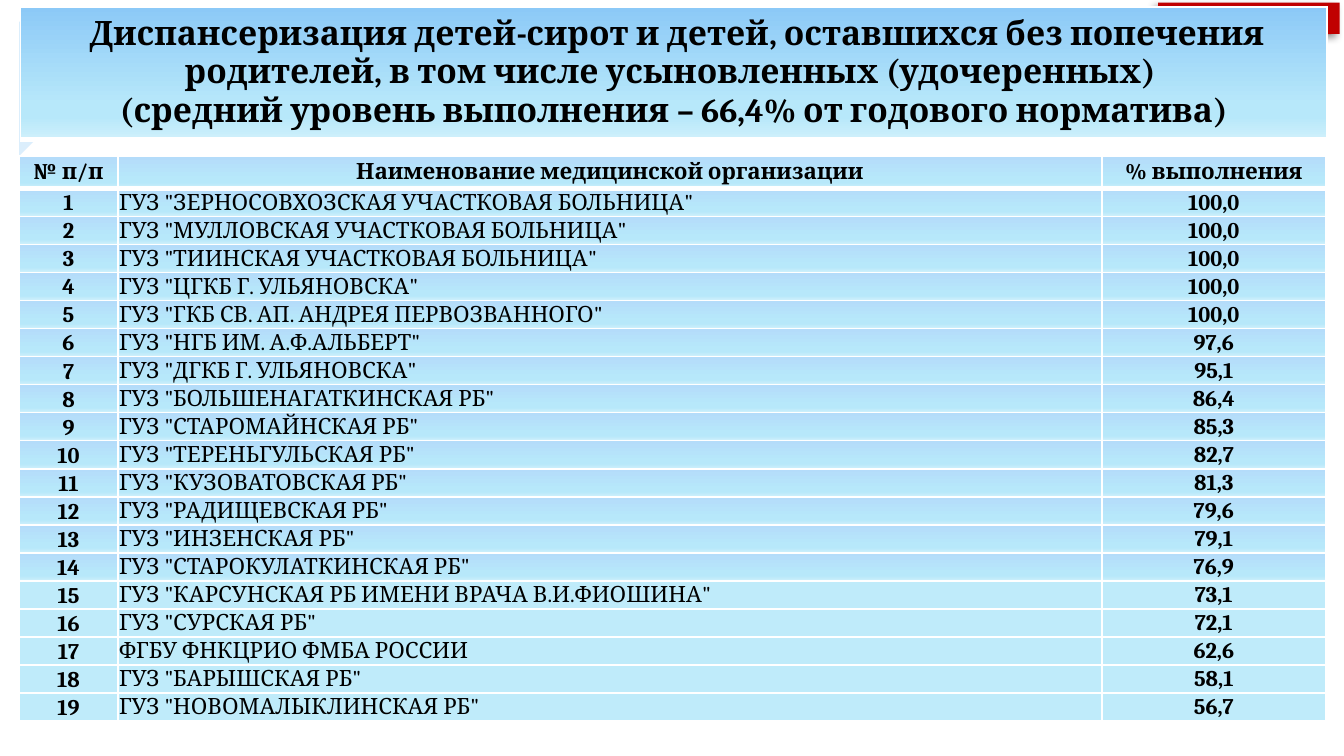
from lxml.etree import SubElement
from pptx import Presentation
from pptx.dml.color import RGBColor
from pptx.enum.shapes import MSO_SHAPE as Preset
from pptx.enum.text import MSO_ANCHOR as Anchor, PP_ALIGN as Align
from pptx.oxml.ns import qn
from pptx.util import Cm, Pt

FONT = "Cambria"
WHITE, BLACK, RED, BLUE = "FFFFFF", "000000", "C00000", "4FADF3"
LIGHT_BLUE = "BFEBFA"
TITLE_GRADIENT = [(0, "8CC9F7"), (74, "B7E8FA"), (83, "B7E8FA"), (100, "CFF0FB")]
ROW_GRADIENT = [(0, "B4DCFA")] + TITLE_GRADIENT[1:]
GRADIENT_ROWS = 14

TITLE = [
    " Диспансеризация детей-сирот и детей, оставшихся без попечения "
    "родителей, в том числе усыновленных (удочеренных) ",
    "(средний уровень выполнения – 66,4% от годового норматива)",
]
HEADERS = ["№ п/п", "Наименование медицинской организации", "% выполнения"]
ORGANIZATIONS = [
    ('ГУЗ "ЗЕРНОСОВХОЗСКАЯ УЧАСТКОВАЯ БОЛЬНИЦА"', "100,0"),
    ('ГУЗ "МУЛЛОВСКАЯ УЧАСТКОВАЯ БОЛЬНИЦА"', "100,0"),
    ('ГУЗ "ТИИНСКАЯ УЧАСТКОВАЯ БОЛЬНИЦА"', "100,0"),
    ('ГУЗ "ЦГКБ Г. УЛЬЯНОВСКА"', "100,0"),
    ('ГУЗ "ГКБ СВ. АП. АНДРЕЯ ПЕРВОЗВАННОГО"', "100,0"),
    ('ГУЗ "НГБ ИМ. А.Ф.АЛЬБЕРТ"', "97,6"),
    ('ГУЗ "ДГКБ Г. УЛЬЯНОВСКА"', "95,1"),
    ('ГУЗ "БОЛЬШЕНАГАТКИНСКАЯ РБ"', "86,4"),
    ('ГУЗ "СТАРОМАЙНСКАЯ РБ"', "85,3"),
    ('ГУЗ "ТЕРЕНЬГУЛЬСКАЯ РБ"', "82,7"),
    ('ГУЗ "КУЗОВАТОВСКАЯ РБ"', "81,3"),
    ('ГУЗ "РАДИЩЕВСКАЯ РБ"', "79,6"),
    ('ГУЗ "ИНЗЕНСКАЯ РБ"', "79,1"),
    ('ГУЗ "СТАРОКУЛАТКИНСКАЯ РБ"', "76,9"),
    ('ГУЗ "КАРСУНСКАЯ РБ ИМЕНИ ВРАЧА В.И.ФИОШИНА"', "73,1"),
    ('ГУЗ "СУРСКАЯ РБ"', "72,1"),
    ("ФГБУ ФНКЦРИО ФМБА РОССИИ", "62,6"),
    ('ГУЗ "БАРЫШСКАЯ РБ"', "58,1"),
    ('ГУЗ "НОВОМАЛЫКЛИНСКАЯ РБ"', "56,7"),
]


def rgb(color):
    return RGBColor.from_string(color)


def add_color(parent, color, alpha=100):
    element = SubElement(parent, qn("a:srgbClr"), val=color)
    if alpha < 100:
        SubElement(element, qn("a:alpha"), val=str(alpha * 1000))


def add_filled_shape(slide, preset, left, top, width, height, color):
    shape = slide.shapes.add_shape(preset, Cm(left), Cm(top), Cm(width), Cm(height))
    shape.shadow.inherit = False
    shape.fill.solid()
    shape.fill.fore_color.rgb = rgb(color)
    shape.line.fill.background()
    return shape


def add_shadow(shape):
    effects = shape.element.spPr.find(qn("a:effectLst"))
    shadow = SubElement(effects, qn("a:outerShdw"), blurRad=str(Pt(4)),
                        dist=str(Pt(3)), dir=str(135 * 60000))
    add_color(shadow, BLACK, 40)


def set_transparency(shape, alpha):
    color = shape.element.spPr.find(qn("a:solidFill"))[0]
    SubElement(color, qn("a:alpha"), val=str(alpha * 1000))


def add_grid(slide, left, top, widths, heights):
    frame = slide.shapes.add_table(len(heights), len(widths), Cm(left), Cm(top),
                                   Cm(sum(widths)), Cm(sum(heights)))
    table = frame.table
    table.horz_banding = False
    table.first_row = False
    for column, width in zip(table.columns, widths):
        column.width = Cm(width)
    for row, height in zip(table.rows, heights):
        row.height = Cm(height)
    return table


def set_borders(cell, top=1, bottom=1):
    properties = cell._tc.get_or_add_tcPr()
    for side, width in (("L", 1), ("R", 1), ("T", top), ("B", bottom)):
        line = SubElement(properties, qn(f"a:ln{side}"), w=str(Pt(width)))
        add_color(SubElement(line, qn("a:solidFill")), WHITE)


def set_gradient(cell, stops):
    gradient = SubElement(cell._tc.get_or_add_tcPr(), qn("a:gradFill"))
    stop_list = SubElement(gradient, qn("a:gsLst"))
    for position, color in stops:
        add_color(SubElement(stop_list, qn("a:gs"), pos=str(position * 1000)), color)
    SubElement(gradient, qn("a:lin"), ang=str(90 * 60000), scaled="0")


def set_fill(cell, fill):
    if isinstance(fill, list):
        set_gradient(cell, fill)
    else:
        cell.fill.solid()
        cell.fill.fore_color.rgb = rgb(fill)


def write_cell(cell, text, size=12, bold=True, align=Align.CENTER,
               anchor=Anchor.MIDDLE, margins=(0.25, 0.13, 0.13)):
    side, top, bottom = margins
    cell.margin_left = cell.margin_right = Cm(side)
    cell.margin_top, cell.margin_bottom = Cm(top), Cm(bottom)
    cell.vertical_anchor = anchor
    cell.text = text
    for paragraph in cell.text_frame.paragraphs:
        paragraph.alignment = align
        paragraph.font.name = FONT
        paragraph.font.size = Pt(size)
        paragraph.font.bold = bold
        paragraph.font.color.rgb = rgb(BLACK)


def add_title(slide):
    cell = add_grid(slide, 0.39, 0.13, [24.69], [2.5]).cell(0, 0)
    write_cell(cell, "\n".join(TITLE), size=18)
    set_borders(cell, bottom=3)
    set_fill(cell, TITLE_GRADIENT)


def add_results(slide):
    heights = [0.61] + [0.53] * len(ORGANIZATIONS)
    table = add_grid(slide, 0.36, 2.95, [1.87, 18.6, 4.22], heights)
    for column, header in enumerate(HEADERS):
        cell = table.cell(0, column)
        write_cell(cell, header, margins=(0.18, 0, 0))
        set_borders(cell, bottom=3)
        set_fill(cell, ROW_GRADIENT)
    tight = (0.02, 0.02, 0)
    for number, (name, percent) in enumerate(ORGANIZATIONS, 1):
        number_cell, name_cell, percent_cell = table.rows[number].cells
        write_cell(number_cell, str(number), anchor=Anchor.BOTTOM, margins=(0.18, 0, 0))
        write_cell(name_cell, name, bold=False, align=Align.LEFT, margins=tight)
        write_cell(percent_cell, percent, margins=tight)
        for cell in (number_cell, name_cell, percent_cell):
            set_borders(cell, top=3 if number == 1 else 1)
            set_fill(cell, ROW_GRADIENT if number <= GRADIENT_ROWS else LIGHT_BLUE)


def main():
    presentation = Presentation()
    presentation.slide_width, presentation.slide_height = Cm(25.4), Cm(14.29)
    slide = presentation.slides.add_slide(presentation.slide_layouts[6])
    tab = add_filled_shape(slide, Preset.FLOWCHART_DOCUMENT, 21.89, 0.05, 3.43, 0.74, RED)
    add_shadow(tab)
    corner = add_filled_shape(slide, Preset.RIGHT_TRIANGLE, 0.36, 0.41, 2.54, 2.54, BLUE)
    corner.rotation = 90
    set_transparency(corner, 20)
    add_title(slide)
    add_results(slide)
    presentation.save("out.pptx")


if __name__ == "__main__":
    main()
